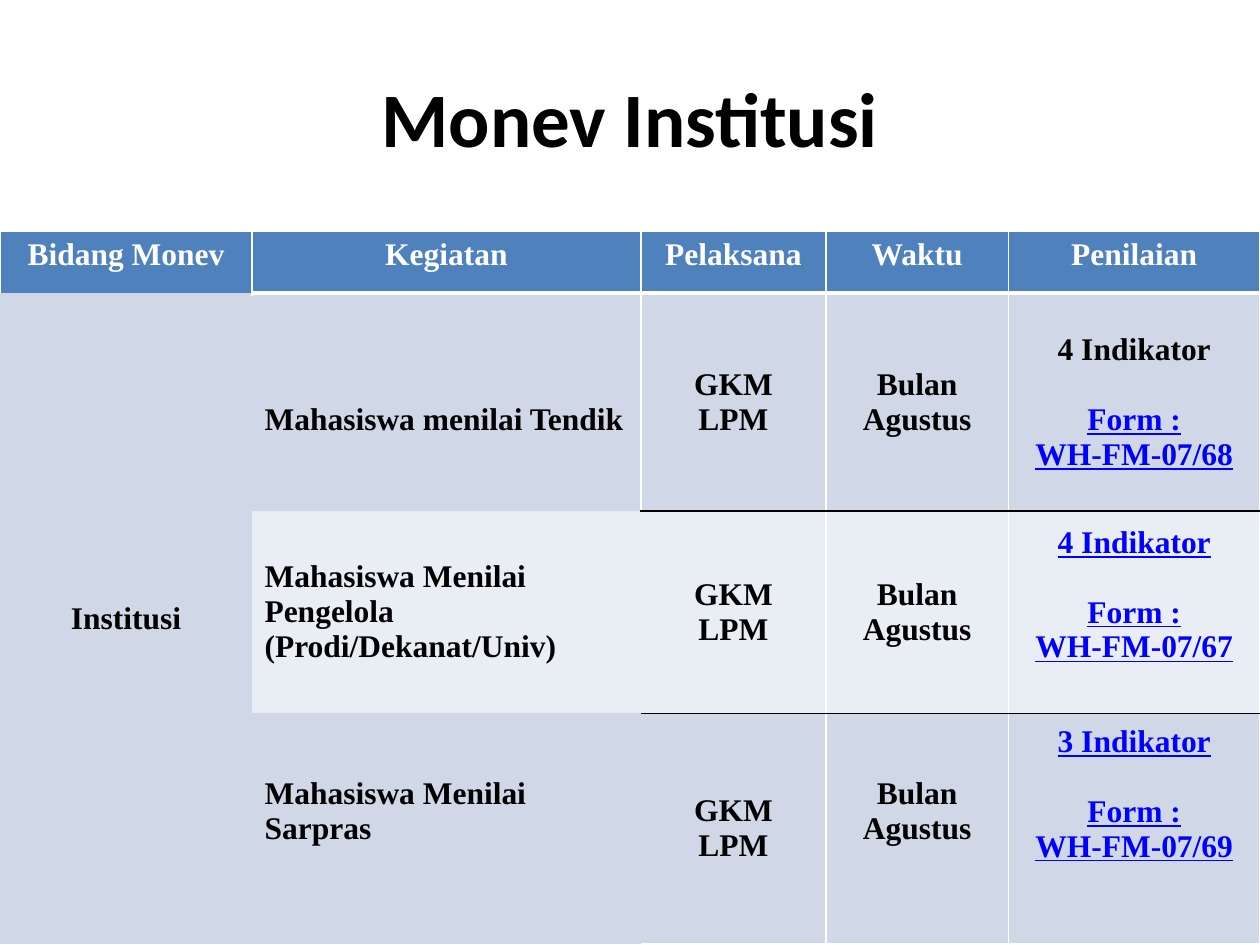
from lxml.etree import SubElement as Sub
from pptx import Presentation
from pptx.dml.color import RGBColor
from pptx.enum.text import MSO_ANCHOR as Anchor, PP_ALIGN as Align
from pptx.oxml.ns import qn
from pptx.util import Cm, Pt

BLACK = RGBColor(0x00, 0x00, 0x00)
WHITE = RGBColor(0xFF, 0xFF, 0xFF)
LINK = RGBColor(0x00, 0x00, 0xFF)
HEAD = RGBColor(0x4F, 0x81, 0xBD)
DARK = RGBColor(0xD0, 0xD8, 0xE8)
PALE = RGBColor(0xE9, 0xED, 0xF4)
PLAIN = "{2D5ABB26-0587-4C30-8999-92F81FD0307C}"
LINE = 0.7
PAD = 0.13

COLS = [5.08, 7.84, 3.73, 3.68, 5.07]
ROWS = [1.25, 4.39, 4.08, 4.47]
TITLES = ["Bidang Monev", "Kegiatan", "Pelaksana", "Waktu", "Penilaian"]
TASKS = [
    ("Mahasiswa menilai Tendik", "4 Indikator", "68", BLACK, DARK),
    ("Mahasiswa Menilai Pengelola (Prodi/Dekanat/Univ)", "4 Indikator", "67", LINK, PALE),
    ("Mahasiswa Menilai Sarpras", "3 Indikator", "69", LINK, DARK),
]
ABOVE = {(1, 1): 1}
BELOW = {(2, 4): 1, (3, 1): 1, (3, 3): 1, (3, 4): 2}


class Deck:
    def __init__(self, wide, high):
        self.prs = Presentation()
        self.prs.slide_width, self.prs.slide_height = Cm(wide), Cm(high)
        self.slide = self.prs.slides.add_slide(self.prs.slide_layouts[6])
        self.base = {"name": "Times New Roman", "size": Pt(18), "bold": True}

    def label(self, para, text, align, color=BLACK, **look):
        para.alignment = align
        run = para.add_run()
        run.text = text
        for key, val in {**self.base, **look}.items():
            setattr(run.font, key, val)
        run.font.color.rgb = color

    def title(self, text, *box):
        frame = self.slide.shapes.add_textbox(*map(Cm, box)).text_frame
        frame.word_wrap = True
        frame.vertical_anchor = Anchor.MIDDLE
        self.label(frame.paragraphs[0], text, Align.CENTER, name="Calibri", size=Pt(44))

    def table(self, left, top, cols, rows):
        frame = self.slide.shapes.add_table(
            len(rows), len(cols), Cm(left), Cm(top), Cm(sum(cols)), Cm(sum(rows)))
        grid = frame.table
        grid._tbl.tblPr.find(qn("a:tableStyleId")).text = PLAIN
        for col, wide in zip(grid.columns, cols):
            col.width = Cm(wide)
        for row, high in zip(grid.rows, rows):
            row.height = Cm(high)
        return grid

    def edges(self, cell, lines):
        props = cell._tc.get_or_add_tcPr()
        for side in "LRTB":
            color, wide = lines.get(side, (None, 0))
            edge = Sub(props, qn(f"a:ln{side}"), w=str(Pt(wide)))
            if color is None:
                Sub(edge, qn("a:noFill"))
            else:
                fill = Sub(edge, qn("a:solidFill"))
                Sub(fill, qn("a:srgbClr"), val=str(color))

    def cell(self, cell, parts, fill, lines, align=Align.CENTER,
             anchor=Anchor.MIDDLE, above=0, below=0):
        self.edges(cell, lines)
        cell.fill.solid()
        cell.fill.fore_color.rgb = fill
        cell.vertical_anchor = anchor
        cell.margin_top = Cm(PAD + above * LINE)
        cell.margin_bottom = Cm(PAD + below * LINE)
        frame = cell.text_frame
        for i, (text, color, gap) in enumerate(parts):
            para = frame.add_paragraph() if i else frame.paragraphs[0]
            para.space_before = Pt(gap)
            self.label(para, text, align, color, underline=color == LINK)


def main():
    deck = Deck(25.4, 19.05)
    deck.title("Monev Institusi", 1.27, 0.76, 22.86, 3.18)
    grid = deck.table(0, 4.66, COLS, ROWS)
    thin, thick, rule = (WHITE, 1), (WHITE, 3), (BLACK, 1)

    for c, text in enumerate(TITLES):
        lines = {"L": thin, "T": thin, "R": thin}
        if c:
            lines["B"] = thick
        deck.cell(grid.cell(0, c), [(text, WHITE, 0)], HEAD, lines, anchor=Anchor.TOP)

    grid.cell(1, 0).merge(grid.cell(3, 0))
    deck.cell(grid.cell(1, 0), [("Institusi", BLACK, 0)], DARK, {})

    for r, (task, count, code, color, fill) in enumerate(TASKS, 1):
        texts = [
            [(task, BLACK, 0)],
            [("GKM", BLACK, 0), ("LPM", BLACK, 0)],
            [("Bulan Agustus", BLACK, 0)],
            [(count, color, 0), ("Form :", LINK, 20), (f"WH-FM-07/{code}", LINK, 0)],
        ]
        for c, parts in enumerate(texts, 1):
            lines = {}
            if c > 1:
                lines = {"R": thin, "T": thick if r == 1 else rule,
                         "B": thin if r == 3 else rule}
                if c > 2 or r == 1:
                    lines["L"] = thin
            elif r == 1:
                lines = {"T": thick, "R": thin}
            deck.cell(grid.cell(r, c), parts, fill, lines,
                      Align.LEFT if c == 1 else Align.CENTER,
                      above=ABOVE.get((r, c), 0), below=BELOW.get((r, c), 0))

    deck.prs.save("out.pptx")


if __name__ == "__main__":
    main()
